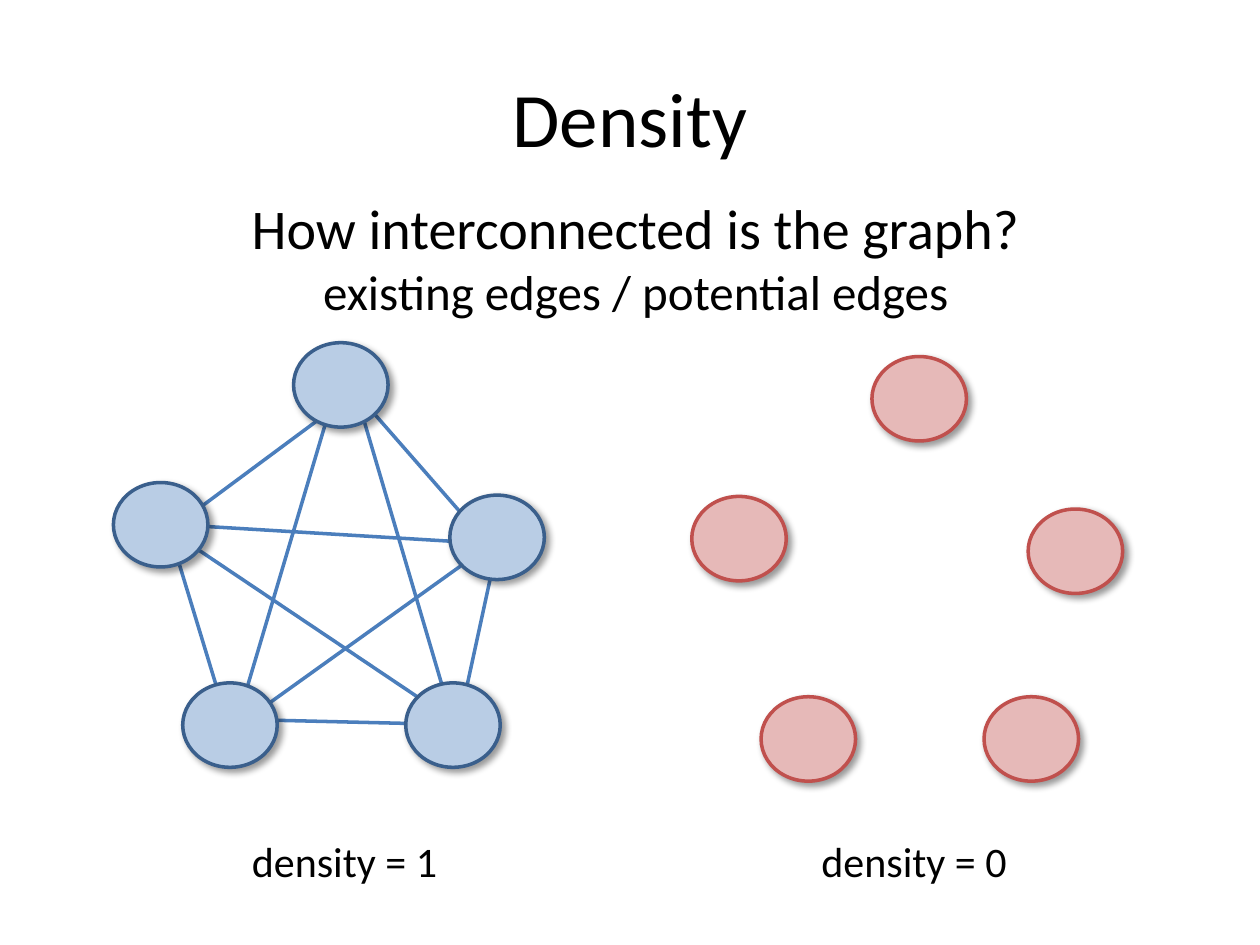
"""Build a slide that contrasts a complete graph with an edgeless one."""
from lxml import etree
from pptx import Presentation
from pptx.dml.color import RGBColor
from pptx.enum.shapes import MSO_CONNECTOR, MSO_SHAPE
from pptx.enum.text import MSO_ANCHOR, PP_ALIGN
from pptx.oxml import parse_xml
from pptx.oxml.ns import nsdecls, qn
from pptx.util import Inches, Pt

SHADOW = (
    f'<a:effectLst {nsdecls("a")}>'
    f'<a:outerShdw blurRad="{Pt(4)}" dist="{Pt(3)}" dir="2700000" rotWithShape="0">'
    '<a:srgbClr val="000000"><a:alpha val="40000"/></a:srgbClr>'
    '</a:outerShdw></a:effectLst>'
)


def color(value):
    return RGBColor.from_string(value)


def write(frame, text, sizes):
    frame.word_wrap = True
    paragraph = frame.paragraphs[0]
    paragraph.text = text
    paragraph.alignment = PP_ALIGN.CENTER
    for run, size in zip(paragraph.runs, sizes):
        run.font.name = "Calibri"
        run.font.size = Pt(size)
        run.font.color.rgb = color("000000")


prs = Presentation()
prs.slide_width, prs.slide_height = Inches(10), Inches(7.5)
slide = prs.slides.add_slide(prs.slide_layouts[5])
shapes = slide.shapes

title = shapes.title
title.left, title.top = Inches(0.5), Inches(0.3)
title.width, title.height = Inches(9), Inches(1.25)
write(title.text_frame, "Density", [44])
title.text_frame.vertical_anchor = MSO_ANCHOR.MIDDLE

edges = [
    (1.36, 4.22, 3.64, 5.75),
    (3.98, 4.26, 1.9, 5.75),
    (1.33, 4.16, 3.98, 4.32),
    (2.81, 3.07, 3.6, 5.75),
    (2.67, 3.07, 1.88, 5.73),
    (3.64, 5.75, 3.95, 4.32),
    (1.41, 4.16, 2.88, 3.07),
    (1.36, 4.27, 1.81, 5.75),
    (3.59, 5.75, 1.91, 5.71),
    (2.81, 3.1, 3.92, 4.37),
]
for ends in edges:
    edge = shapes.add_connector(MSO_CONNECTOR.STRAIGHT, *map(Inches, ends))
    edge.line.color.rgb = color("4B7EBC")
    edge.line.width = Pt(2)
    etree.SubElement(edge._element.spPr, qn("a:effectLst"))

nodes = [(0.9, 3.83), (3.57, 3.93), (3.22, 5.42), (1.45, 5.42), (2.33, 2.72)]
graphs = [
    (0, 0, "B9CDE5", "3A5F8C", "density = 1", 1.45),
    (4.59, 0.11, "E6B9B8", "C0504D", "density = 0", 5.97),
]
for shift_x, shift_y, fill, outline, caption, caption_left in graphs:
    for x, y in nodes:
        node = shapes.add_shape(MSO_SHAPE.OVAL, Inches(x + shift_x), Inches(y + shift_y),
                                Inches(0.75), Inches(0.67))
        node.fill.solid()
        node.fill.fore_color.rgb = color(fill)
        node.line.color.rgb = color(outline)
        node.line.width = Pt(2)
        node._element.spPr.append(parse_xml(SHADOW))
    label = shapes.add_textbox(Inches(caption_left), Inches(6.58), Inches(2.57), Inches(0.5))
    write(label.text_frame, caption, [24])

question = shapes.add_textbox(Inches(1.17), Inches(1.49), Inches(7.75), Inches(1.11))
write(question.text_frame,
      "How interconnected is the graph?\vexisting edges / potential edges", [32, 28])

prs.save("out.pptx")
